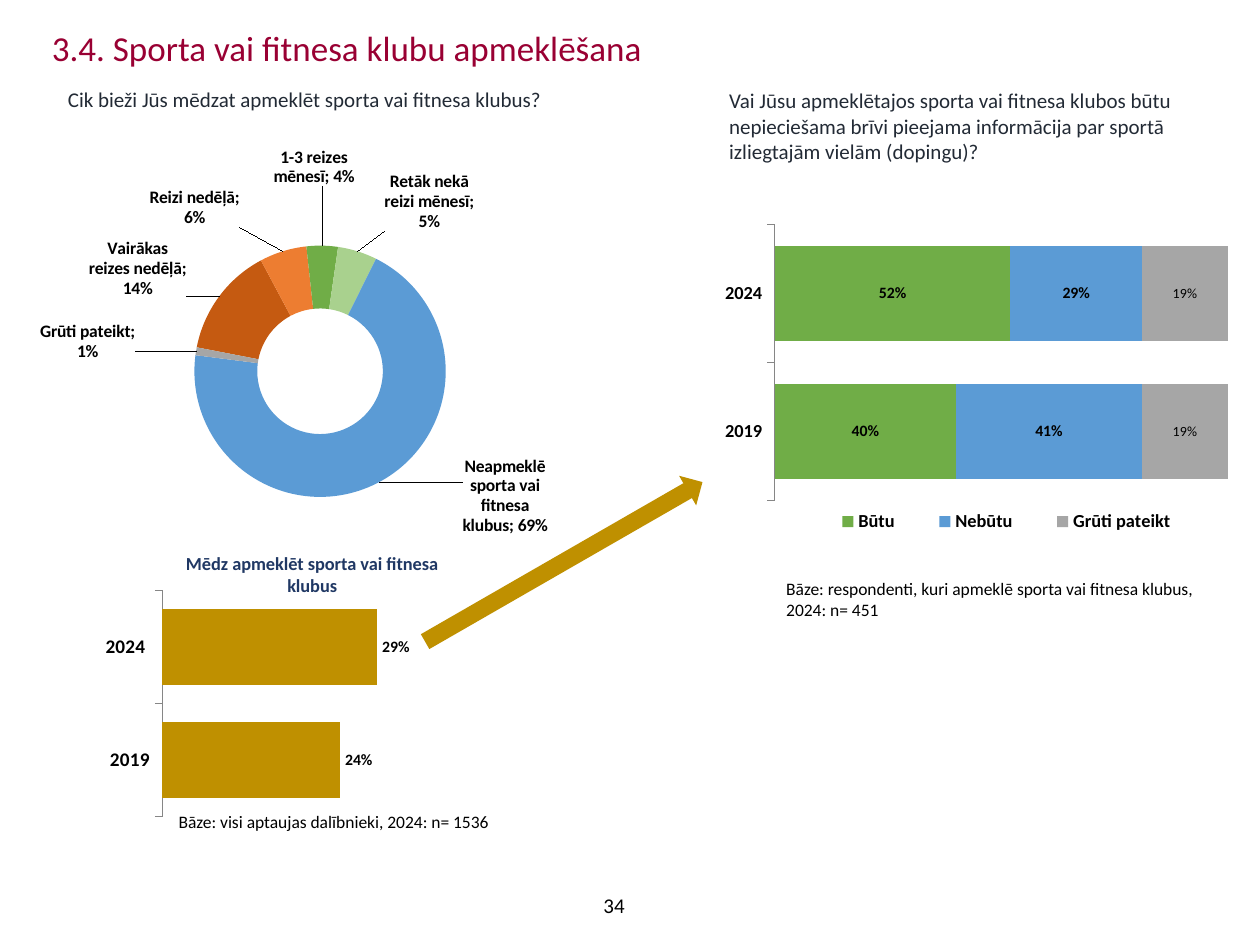
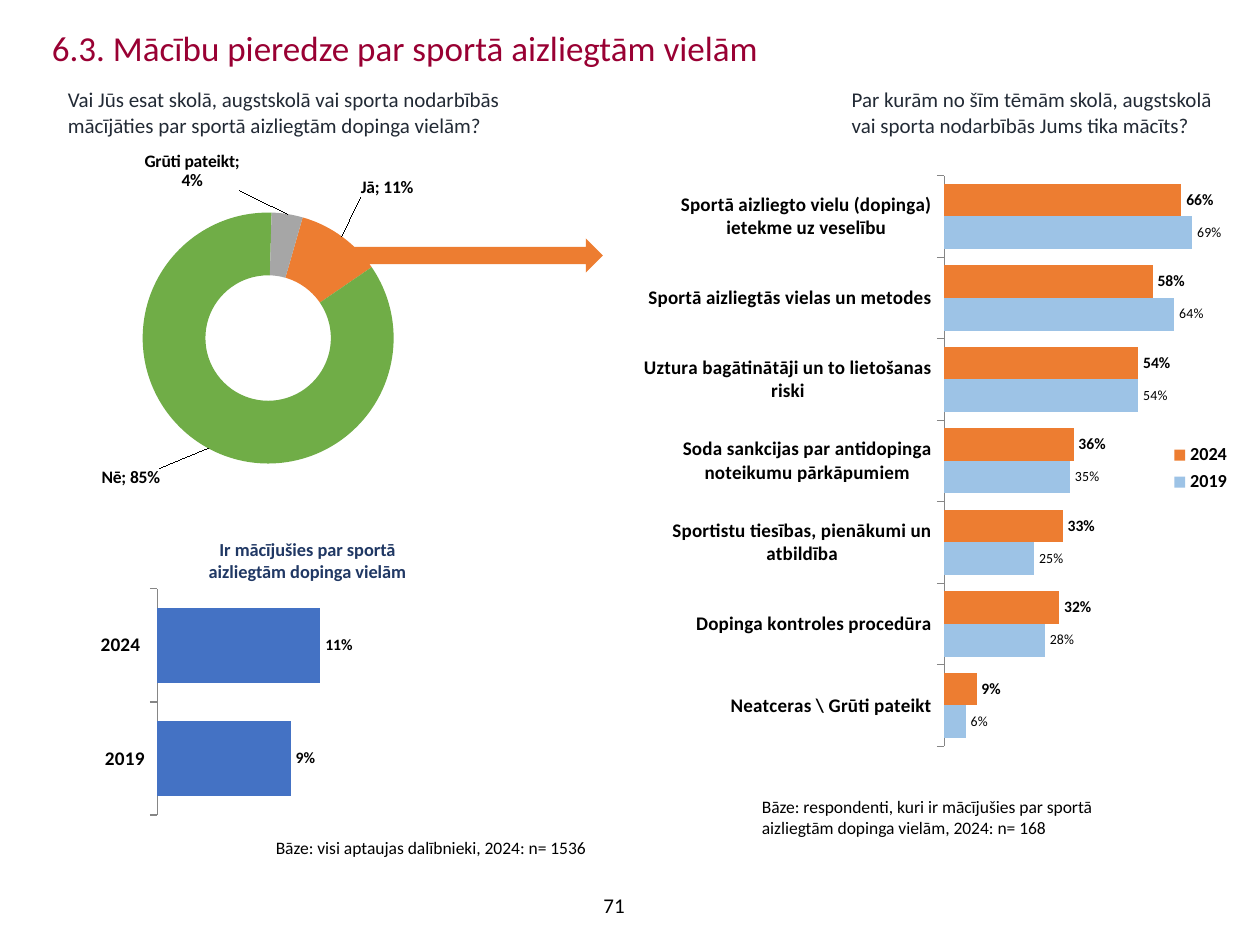
"""Build two survey slides on sports clubs and anti-doping education."""

from copy import deepcopy
from math import cos, pi, sin

from lxml.etree import SubElement
from pptx import Presentation
from pptx.chart.data import CategoryChartData
from pptx.dml.color import RGBColor
from pptx.enum.chart import XL_CHART_TYPE, XL_LABEL_POSITION, XL_LEGEND_POSITION, XL_TICK_MARK
from pptx.enum.shapes import MSO_SHAPE
from pptx.enum.text import MSO_ANCHOR, MSO_AUTO_SIZE, PP_ALIGN
from pptx.oxml.ns import qn
from pptx.util import Cm, Pt

FONT = "Calibri"
BLACK, CRIMSON, SLATE, NAVY, AXIS_GREY = "000000", "990033", "222A35", "203864", "868686"
GREEN, LIGHT_GREEN, BLUE, LIGHT_BLUE = "70AD47", "A9D18E", "5B9BD5", "9DC3E6"
ORANGE, BROWN, GREY, GOLD, ROYAL = "ED7D31", "C55A11", "A6A6A6", "BF9000", "4472C4"

TITLE_BOX = (0.79, 0.41, 23.8, 1.24)
NUMBER_BOX = (9.42, 17.73, 5.92, 1.02)
YEARS = ["2019", "2024 "]
BAR_PLOT = (0.171, 0.058, 0.813, 0.913)
EVERYONE = "Bāze: visi aptaujas dalībnieki, 2024: n= 1536"

SLIDES = [
    {
        "title": "3.4. Sporta vai fitnesa klubu apmeklēšana",
        "number": "34",
        "questions": [
            ("Cik bieži Jūs mēdzat apmeklēt sporta vai fitnesa klubus?", (1.12, 1.63, 10.3, 0.94)),
            ("Vai Jūsu apmeklētajos sporta vai fitnesa klubos būtu nepieciešama brīvi pieejama "
             "informācija par sportā izliegtajām vielām (dopingu)?", (14.45, 1.65, 10.16, 0.94)),
        ],
        "heading": ("Mēdz apmeklēt sporta vai fitnesa klubus", (3.02, 11, 6.55, 0.71)),
        "bases": [
            (EVERYONE, (3.35, 16.23, 6.86, 0.69), False),
            ("Bāze: respondenti, kuri apmeklē sporta vai fitnesa klubus, 2024: n= 451",
             (15.6, 11.53, 8.99, 1.12), True),
        ],
        "doughnut": {
            "box": (0.3, 2.49, 12.01, 9.4), "plot": (0.253, 0.262, 0.519, 0.539), "start": 281,
            "slices": [
                ("Vairākas reizes nedēļā", 0.14, BROWN, (2.78, 5.42)),
                ("Reizi nedēļā", 0.06, ORANGE, (3.93, 4.19)),
                ("1-3 reizes mēnesī", 0.04, GREEN, (6.33, 3.37)),
                ("Retāk nekā reizi mēnesī", 0.05, LIGHT_GREEN, (8.65, 4.07)),
                ("Neapmeklē sporta vai fitnesa klubus", 0.69, BLUE, (10.18, 10)),
                ("Grūti pateikt", 0.01, GREY, (1.77, 6.89)),
            ],
        },
        "bars": [
            {"box": (1.7, 11.61, 9.19, 5), "plot": BAR_PLOT, "categories": YEARS, "maximum": 0.5,
             "series": [("Mēdz apmeklēt", [0.24, 0.29], GOLD, True)]},
            {"box": (14.45, 4.5, 10.34, 6.4), "plot": (0.113, 0.005, 0.884, 0.869),
             "categories": ["2019", "2024"], "maximum": 1, "stacked": True, "gap": 45, "size": 10.5,
             "legend": (XL_LEGEND_POSITION.BOTTOM, (0.17, 0.89, 0.79, 0.1)),
             "series": [("Būtu", [0.4, 0.52], GREEN, True),
                        ("Nebūtu", [0.41, 0.29], BLUE, True),
                        ("Grūti pateikt", [0.19, 0.19], GREY, False)]},
        ],
        "arrow": ((11.02, 8.1, 0.69, 6.45), 240.1, GOLD),
    },
    {
        "title": "6.3. Mācību pieredze par sportā aizliegtām vielām",
        "number": "71",
        "questions": [
            ("Vai Jūs esat skolā, augstskolā vai sporta nodarbībās mācījāties par sportā "
             "aizliegtām dopinga vielām?", (1.12, 1.63, 10.19, 1.5)),
            ("Par kurām no šīm tēmām skolā, augstskolā vai sporta nodarbībās Jums tika mācīts?",
             (16.92, 1.63, 8.23, 1.5)),
        ],
        "heading": ("Ir mācījušies par sportā aizliegtām dopinga vielām", (3.43, 10.72, 5.54, 1.14)),
        "bases": [
            (EVERYONE, (5.31, 16.74, 6.86, 0.69), False),
            ("Bāze: respondenti, kuri ir mācījušies par sportā aizliegtām dopinga vielām, "
             "2024: n= 168", (15.11, 15.93, 8, 1.12), True),
        ],
        "doughnut": {
            "box": (0, 2.46, 9.75, 9.4), "plot": (0.295, 0.194, 0.519, 0.539), "start": 16,
            "slices": [
                ("Jā", 0.11, ORANGE, (7.8, 3.77)),
                ("Nē", 0.85, GREEN, (2.64, 9.64)),
                ("Grūti pateikt", 0.04, GREY, (3.87, 3.45)),
            ],
        },
        "bars": [
            {"box": (1.6, 11.58, 9.19, 5), "plot": BAR_PLOT, "categories": YEARS, "maximum": 0.25,
             "series": [("Ir mācījušies", [0.09, 0.11], ROYAL, True)]},
            {"box": (12.98, 3.4, 12.19, 11.86), "plot": (0.491, 0.012, 0.481, 0.97),
             "categories": ["Neatceras \\ Grūti pateikt", "Dopinga kontroles procedūra",
                            "Sportistu tiesības, pienākumi un atbildība",
                            "Soda sankcijas par antidopinga noteikumu pārkāpumiem",
                            "Uztura bagātinātāji un to lietošanas riski",
                            "Sportā aizliegtās vielas un metodes",
                            "Sportā aizliegto vielu (dopinga) ietekme uz veselību"],
             "maximum": 0.8,
             "legend": (XL_LEGEND_POSITION.RIGHT, (0.86, 0.46, 0.12, 0.1)),
             "series": [("2019", [0.06, 0.28, 0.25, 0.35, 0.54, 0.64, 0.69], LIGHT_BLUE, False),
                        ("2024", [0.09, 0.32, 0.33, 0.36, 0.54, 0.58, 0.66], ORANGE, True)]},
        ],
        "arrow": ((9.17, 2.51, 0.69, 5.28), 270, ORANGE),
    },
]


def color(value):
    """Return an RGB colour from a hex string."""
    return RGBColor.from_string(value)


def format_font(font, size, bold=False, fill=BLACK):
    """Apply the shared typeface with a size, weight and colour."""
    font.name, font.size, font.bold = FONT, Pt(size), bold
    font.color.rgb = color(fill)


def place(shape, box):
    """Move and size a shape to a box in centimetres."""
    shape.left, shape.top, shape.width, shape.height = (Cm(length) for length in box)


def write_text(slide, text, box, size=12, fill=BLACK, bold=False, align=PP_ALIGN.LEFT,
               anchor=MSO_ANCHOR.TOP, wrap=True, shape=None):
    """Write formatted text into a given shape or a new text box."""
    shape = shape or slide.shapes.add_textbox(0, 0, 0, 0)
    place(shape, box)
    frame = shape.text_frame
    frame.word_wrap, frame.vertical_anchor = wrap, anchor
    frame.auto_size = MSO_AUTO_SIZE.NONE
    paragraph = frame.paragraphs[0]
    paragraph.text, paragraph.alignment = text, align
    format_font(paragraph.runs[0].font, size, bold, fill)


def chart_element(parent, tag, value=None):
    """Append a chart element with an optional value."""
    element = SubElement(parent, qn(f"c:{tag}"))
    if value is not None:
        element.set("val", str(value))
    return element


def fill_layout(layout, inner=False, **settings):
    """Give a layout element manual settings."""
    for child in list(layout):
        layout.remove(child)
    manual = chart_element(layout, "manualLayout")
    if inner:
        chart_element(manual, "layoutTarget", "inner")
    for tag, value in settings.items():
        chart_element(manual, tag, value)


def fixed_layout(layout, box, inner=False):
    """Fix a layout to a box given as fractions of the chart."""
    x, y, width, height = box
    fill_layout(layout, inner, xMode="edge", yMode="edge", x=x, y=y, w=width, h=height)


def add_chart(slide, kind, details, categories, series):
    """Add a chart with a fixed plot area and return it."""
    data = CategoryChartData(number_format="0%")
    data.categories = categories
    for name, values in series:
        data.add_series(name, values)
    chart = slide.shapes.add_chart(kind, *(Cm(length) for length in details["box"]), data).chart
    format_font(chart.font, 18)
    chart.has_title = chart.has_legend = False
    plot_area = chart.plots[0]._element.getparent()
    layout = plot_area.find(qn("c:layout"))
    if layout is None:
        layout = chart_element(plot_area, "layout")
        plot_area.insert(0, layout)
    fixed_layout(layout, details["plot"], inner=True)
    return chart


def show_values(series, size, bold):
    """Show percentage labels on a series and return them."""
    labels = series.data_labels
    labels.show_value = True
    labels.number_format, labels.number_format_is_linked = "0%", False
    format_font(labels.font, size, bold)
    return labels


def add_doughnut(slide, details):
    """Add a doughnut whose labels stand at given centres."""
    names, values, fills, centres = zip(*details["slices"])
    chart = add_chart(slide, XL_CHART_TYPE.DOUGHNUT, details, names, [("Atbildes", values)])
    plot = chart.plots[0]
    plot.vary_by_categories = True
    plot._element.find(qn("c:firstSliceAng")).set("val", str(details["start"]))
    plot._element.find(qn("c:holeSize")).set("val", "40")
    series = plot.series[0]
    labels = show_values(series, 10, True)
    labels.show_category_name = True
    group = labels._element
    leader = group.find(qn("c:showLeaderLines"))
    if leader is None:
        leader = chart_element(group, "showLeaderLines")
    leader.set("val", "1")
    separator = chart_element(group, "separator")
    separator.text = "; "
    leader.addprevious(separator)

    left, top, width, height = details["box"]
    x, y, plot_width, plot_height = details["plot"]
    ring = 0.375 * min(plot_width * width, plot_height * height)
    angle = details["start"] * pi / 180
    for index, (value, fill, centre) in enumerate(zip(values, fills, centres)):
        point = series.points[index]
        point.format.fill.solid()
        point.format.fill.fore_color.rgb = color(fill)
        sweep = 2 * pi * value / sum(values)
        middle = angle + sweep / 2
        angle += sweep
        ring_x = left + width * (x + plot_width / 2) + ring * sin(middle)
        ring_y = top + height * (y + plot_height / 2) - ring * cos(middle)
        label = chart_element(group, "dLbl")
        chart_element(label, "idx", index)
        fill_layout(chart_element(label, "layout"), x=round((centre[0] - ring_x) / width, 3),
                    y=round((centre[1] - ring_y) / height, 3))
        for tag in ("numFmt", "txPr"):
            label.append(deepcopy(group.find(qn(f"c:{tag}"))))
        for tag in ("LegendKey", "Val", "CatName", "SerName", "Percent", "BubbleSize"):
            chart_element(label, f"show{tag}", int(tag in ("Val", "CatName")))
        label.append(deepcopy(separator))
        group.insert(index, label)


def add_bars(slide, details):
    """Add a horizontal bar chart with its value axis hidden."""
    stacked = details.get("stacked", False)
    kind = XL_CHART_TYPE.BAR_STACKED_100 if stacked else XL_CHART_TYPE.BAR_CLUSTERED
    chart = add_chart(slide, kind, details, details["categories"],
                      [entry[:2] for entry in details["series"]])
    plot = chart.plots[0]
    plot.vary_by_categories = False
    plot.gap_width = details.get("gap", 50)
    plot.overlap = 100 if stacked else 0
    values, categories = chart.value_axis, chart.category_axis
    values.visible = values.has_major_gridlines = False
    values.minimum_scale, values.maximum_scale = 0, details["maximum"]
    categories.major_tick_mark = XL_TICK_MARK.OUTSIDE
    categories.format.line.color.rgb = color(AXIS_GREY)
    format_font(categories.tick_labels.font, details.get("size", 11), True)
    for series, (_, _, fill, bold) in zip(plot.series, details["series"]):
        series.format.fill.solid()
        series.format.fill.fore_color.rgb = color(fill)
        labels = show_values(series, 9 if bold else 8, bold)
        labels.position = XL_LABEL_POSITION.CENTER if stacked else XL_LABEL_POSITION.OUTSIDE_END
    if "legend" in details:
        position, box = details["legend"]
        chart.has_legend = True
        legend = chart.legend
        legend.position, legend.include_in_layout = position, False
        format_font(legend.font, 10.5, True)
        layout = legend._element.find(qn("c:layout"))
        if layout is None:
            layout = chart_element(legend._element, "layout")
            legend._element.find(qn("c:legendPos")).addnext(layout)
        fixed_layout(layout, box)


def add_arrow(slide, box, rotation, fill):
    """Add a rotated block arrow."""
    arrow = slide.shapes.add_shape(MSO_SHAPE.DOWN_ARROW, 0, 0, 0, 0)
    place(arrow, box)
    arrow.rotation, arrow.shadow.inherit = rotation, False
    arrow.fill.solid()
    arrow.fill.fore_color.rgb = color(fill)
    arrow.line.fill.background()


def build_slide(presentation, content):
    """Build one survey slide from its content."""
    slide = presentation.slides.add_slide(presentation.slide_layouts[5])
    write_text(slide, content["title"], TITLE_BOX, 20, CRIMSON, shape=slide.shapes.title)
    add_doughnut(slide, content["doughnut"])
    for details in content["bars"]:
        add_bars(slide, details)
    add_arrow(slide, *content["arrow"])
    for text, box in content["questions"]:
        write_text(slide, text, box, 12, SLATE)
    write_text(slide, *content["heading"], 10.5, NAVY, bold=True, align=PP_ALIGN.CENTER)
    for text, box, wrap in content["bases"]:
        write_text(slide, text, box, 10, wrap=wrap)
    write_text(slide, content["number"], NUMBER_BOX, align=PP_ALIGN.CENTER,
               anchor=MSO_ANCHOR.MIDDLE)


def main():
    """Create and save the presentation."""
    presentation = Presentation()
    presentation.slide_width, presentation.slide_height = Cm(25.4), Cm(19.05)
    for content in SLIDES:
        build_slide(presentation, content)
    presentation.save("out.pptx")


if __name__ == "__main__":
    main()
